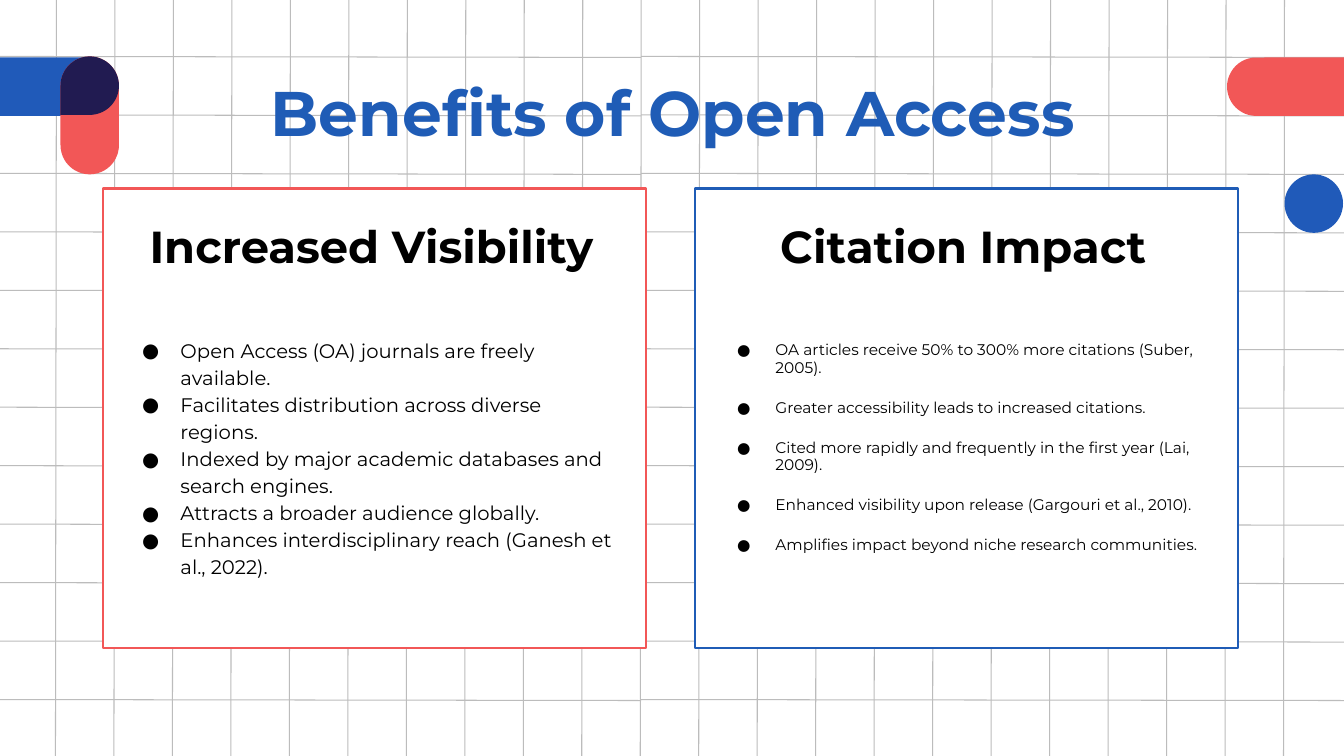
"""Build a slide on the benefits of open access."""
import math
from dataclasses import dataclass
from typing import Any

import pptx
import pptx.dml.color
import pptx.enum.shapes
import pptx.enum.text
import pptx.oxml.ns
import pptx.util
from lxml import etree

Inches = pptx.util.Inches
Color = pptx.dml.color.RGBColor
Kind = pptx.enum.shapes.MSO_SHAPE
Align = pptx.enum.text.PP_ALIGN

BLUE = Color(0x20, 0x5A, 0xB9)
ROYAL = Color(0x1F, 0x5C, 0xB6)
CORAL = Color(0xF2, 0x57, 0x57)
NAVY = Color(0x21, 0x1B, 0x51)
GREY = Color(0xBC, 0xBC, 0xBC)
WHITE = Color(0xFF, 0xFF, 0xFF)
BLACK = Color(0, 0, 0)
FACE = "Montserrat"
WIDE, HIGH, STEP = 13.33, 7.5, 0.58

Box = tuple[float, float, float, float]


@dataclass(frozen=True)
class Form:
    kind: Any
    box: Box
    fill: Color
    line: Color | None = None
    turn: int = 0
    bends: tuple[float, ...] = ()


@dataclass(frozen=True)
class Block:
    slot: int
    box: Box
    lines: tuple[str, ...]
    size: int
    color: Color = BLACK
    bold: bool = False
    align: Any = Align.LEFT
    inset: float = 0.04
    pitch: float = 1.0
    after: int = 0
    left: float = 0
    hang: float = 0
    dots: bool = False


FORMS = (
    Form(Kind.ROUND_2_SAME_RECTANGLE, (0.29, 0.28, 0.58, 1.16), BLUE, turn=90, bends=(0.5, 0)),
    Form(Kind.ROUNDED_RECTANGLE, (0.6, 0.56, 0.58, 1.17), CORAL, bends=(0.5,)),
    Form(Kind.ROUND_2_SAME_RECTANGLE, (12.46, 0.28, 0.58, 1.16), CORAL, turn=270, bends=(0.5, 0)),
    Form(Kind.OVAL, (12.74, 1.73, 0.58, 0.58), BLUE),
    Form(Kind.RECTANGLE, (6.89, 1.87, 5.39, 4.56), WHITE, ROYAL),
    Form(Kind.RECTANGLE, (1.02, 1.87, 5.39, 4.56), WHITE, CORAL),
)

HEAD = {"size": 32, "bold": True, "align": Align.CENTER, "left": 0.5, "hang": -0.42}
LIST = {"hang": -0.38, "dots": True}

BLOCKS = (
    Block(0, (0.84, 0.74, 11.66, 0.83), ("Benefits of Open Access",), 45, ROYAL,
          True, Align.CENTER, 0.13, 0.8),
    Block(2, (1.25, 3.29, 4.87, 2.5), (
        "Open Access (OA) journals are freely available.",
        "Facilitates distribution across diverse regions.",
        "Indexed by major academic databases and search engines.",
        "Attracts a broader audience globally.",
        "Enhances interdisciplinary reach (Ganesh et al., 2022).",
    ), 14, pitch=1.15, left=0.5, **LIST),
    Block(1, (1.21, 2.13, 4.87, 0.64), ("Increased Visibility",), **HEAD),
    Block(4, (7.27, 3.35, 4.87, 2.5), (
        "OA articles receive 50% to 300% more citations (Suber, 2005).",
        "Greater accessibility leads to increased citations.",
        "Cited more rapidly and frequently in the first year (Lai, 2009).",
        "Enhanced visibility upon release (Gargouri et al., 2010).",
        "Amplifies impact beyond niche research communities.",
    ), 11, pitch=0.95, after=16, left=0.38, **LIST),
    Block(3, (7.08, 2.13, 4.87, 0.7), ("Citation Impact",), **HEAD),
)


def apply(target: Any, values: dict[str, Any]) -> None:
    """Set each named value on the target."""
    for name, value in values.items():
        setattr(target, name, value)


def add_node(parent: Any, tag: str, **marks: str) -> Any:
    """Append one drawing element."""
    return etree.SubElement(parent, pptx.oxml.ns.qn(tag), marks)


def draw_line(slide: Any, *ends: float) -> None:
    """Draw one grid line."""
    line = slide.shapes.add_connector(
        pptx.enum.shapes.MSO_CONNECTOR.STRAIGHT, *map(Inches, ends))
    line.line.color.rgb = GREY
    line.line.width = pptx.util.Pt(0.75)
    add_node(line.element.spPr, "a:effectLst")


def draw_grid(slide: Any) -> None:
    """Draw the slightly slanted grid."""
    for col in range(22):
        x = 0.55 + STEP * col
        draw_line(slide, x + 0.01, -0.03, x, 7.53)
    for row in range(12):
        y = 0.56 + STEP * row
        for start, end in ((0, 6.36), (6.36, WIDE)):
            draw_line(slide, end, y + 0.01, start, y)


def paint(shape: Any, fill: Color, line: Color | None) -> None:
    """Give a shape its fill and outline."""
    shape.shadow.inherit = False
    shape.fill.solid()
    shape.fill.fore_color.rgb = fill
    if line is None:
        shape.line.fill.background()
    else:
        shape.line.color.rgb = line
        shape.line.width = pptx.util.Pt(1.5)


def draw_form(slide: Any, form: Form) -> None:
    """Draw one preset shape."""
    shape = slide.shapes.add_shape(form.kind, *map(Inches, form.box))
    shape.rotation = form.turn
    for spot, bend in enumerate(form.bends):
        shape.adjustments[spot] = bend
    paint(shape, form.fill, form.line)


def draw_drop(slide: Any) -> None:
    """Draw the dark disc with one square corner."""
    x, y, r = 0.89, 0.85, 0.29
    turns = [math.radians(90 - step * 5) for step in range(55)]
    rim = [(Inches(x + r * math.cos(t)), Inches(y + r * math.sin(t))) for t in turns]
    path = slide.shapes.build_freeform(Inches(x - r), Inches(y + r))
    path.add_line_segments(rim, close=True)
    paint(path.convert_to_shape(), NAVY, None)


def write_block(slide: Any, block: Block) -> None:
    """Fill one placeholder and bring it to the front."""
    holder = slide.placeholders[block.slot]
    apply(holder, dict(zip(("left", "top", "width", "height"), map(Inches, block.box))))
    holder.element.getparent().append(holder.element)
    frame = holder.text_frame
    sides = ("left", "top", "right", "bottom")
    apply(frame, {f"margin_{side}": Inches(block.inset) for side in sides})
    apply(frame, {
        "word_wrap": True,
        "auto_size": pptx.enum.text.MSO_AUTO_SIZE.NONE,
        "vertical_anchor": pptx.enum.text.MSO_ANCHOR.TOP,
    })
    for place, words in enumerate(block.lines):
        para = frame.add_paragraph() if place else frame.paragraphs[0]
        apply(para, {
            "alignment": block.align,
            "line_spacing": block.pitch,
            "space_before": pptx.util.Pt(0),
            "space_after": pptx.util.Pt(block.after),
        })
        props = para._p.get_or_add_pPr()
        props.set("marL", str(Inches(block.left)))
        props.set("indent", str(Inches(block.hang)))
        if block.dots:
            add_node(add_node(props, "a:buClr"), "a:srgbClr", val=str(BLACK))
            add_node(props, "a:buFont", typeface=FACE)
            add_node(props, "a:buChar", char="●")
        else:
            add_node(props, "a:buNone")
        run = para.add_run()
        run.text = words
        apply(run.font, {"name": FACE, "size": pptx.util.Pt(block.size), "bold": block.bold})
        run.font.color.rgb = block.color


def main() -> None:
    """Build and save the deck."""
    deck = pptx.Presentation()
    apply(deck, {"slide_width": Inches(WIDE), "slide_height": Inches(HIGH)})
    slide = deck.slides.add_slide(deck.slide_layouts.get_by_name("Comparison"))
    draw_grid(slide)
    for place, form in enumerate(FORMS):
        if place == 2:
            draw_drop(slide)
        draw_form(slide, form)
    for block in BLOCKS:
        write_block(slide, block)
    deck.save("out.pptx")


if __name__ == "__main__":
    main()
